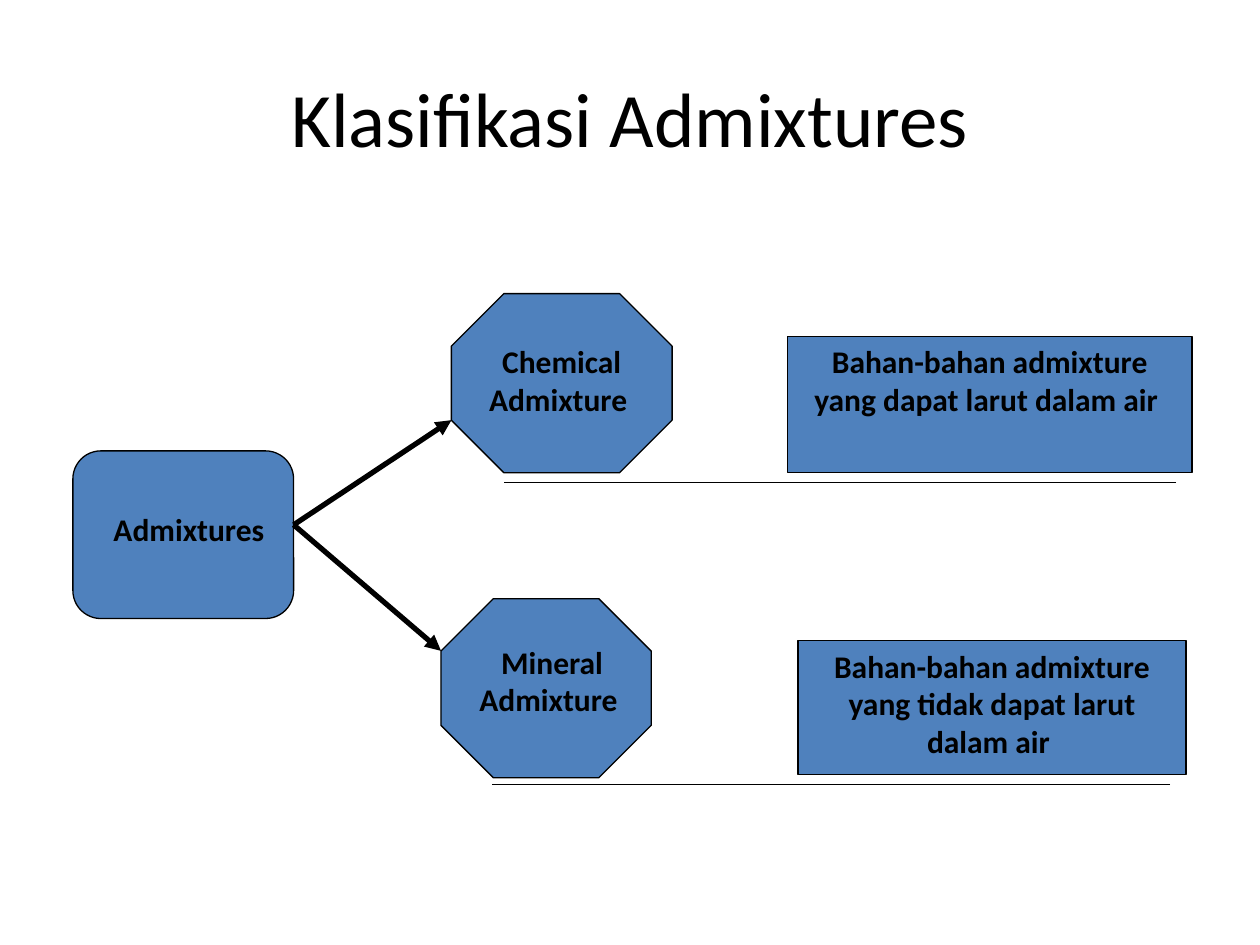
from typing import NamedTuple

from lxml import etree
from pptx import Presentation, util as u
from pptx.dml.color import RGBColor
from pptx.enum import shapes, text
from pptx.oxml import ns

COLOURS = {"fill": "4F81BD", "ink": "000000"}
FONT = "Calibri"


class Box(NamedTuple):
    """Left, top, width and height in centimetres."""
    left: float
    top: float
    width: float
    height: float

    def lengths(self) -> list[u.Cm]:
        return [u.Cm(value) for value in self]


class Node(NamedTuple):
    kind: shapes.MSO_SHAPE
    box: Box
    adjustments: tuple[float, ...]
    label: str
    label_box: Box


class Callout(NamedTuple):
    box: Box
    adjustments: tuple[float, ...]
    label: str


NODES = [
    Node(shapes.MSO_SHAPE.ROUNDED_RECTANGLE, Box(1.47, 9.09, 4.45, 3.38), (0.167,),
         "Admixtures", Box(1.27, 10.16, 5.08, 1.02)),
    Node(shapes.MSO_SHAPE.OCTAGON, Box(9.1, 5.92, 4.45, 3.61), (0.293,),
         "Chemical Admixture ", Box(9.32, 6.78, 4.01, 1.78)),
    Node(shapes.MSO_SHAPE.OCTAGON, Box(8.89, 12.07, 4.24, 3.61), (0.293,),
         "Mineral Admixture ", Box(8.69, 12.83, 4.88, 1.78)),
]
CALLOUTS = [
    Callout(Box(15.88, 6.78, 8.15, 2.74), (1.077, 0.961, 1.077, -0.701),
            "Bahan-bahan admixture yang dapat larut dalam air "),
    Callout(Box(16.09, 12.91, 7.82, 2.7), (1.078, 0.959, 1.078, -0.79),
            "Bahan-bahan admixture yang tidak dapat larut dalam air "),
]
ARROW_START = (5.92, 10.58)
ARROW_ENDS = [(9.1, 8.47), (8.89, 13.12)]


def colour(name: str) -> RGBColor:
    return RGBColor.from_string(COLOURS[name])


def write(shape, content: str, *, size: float = 18, bold: bool = True,
          anchor=text.MSO_ANCHOR.TOP) -> None:
    frame = shape.text_frame
    frame.word_wrap = True
    frame.vertical_anchor = anchor
    paragraph = frame.paragraphs[0]
    paragraph.alignment = text.PP_ALIGN.CENTER
    run = paragraph.add_run()
    run.text = content
    run.font.name = FONT
    run.font.size = u.Pt(size)
    run.font.bold = bold
    run.font.color.rgb = colour("ink")


def add_outlined_shape(slide, kind: shapes.MSO_SHAPE, box: Box,
                       adjustments: tuple[float, ...]):
    shape = slide.shapes.add_shape(kind, *box.lengths())
    for index, value in enumerate(adjustments):
        shape.adjustments[index] = value
    shape.shadow.inherit = False
    shape.fill.solid()
    shape.fill.fore_color.rgb = colour("fill")
    shape.line.color.rgb = colour("ink")
    shape.line.width = u.Pt(0.75)
    return shape


def add_node(slide, node: Node) -> None:
    add_outlined_shape(slide, node.kind, node.box, node.adjustments)
    write(slide.shapes.add_textbox(*node.label_box.lengths()), node.label)


def add_callout(slide, callout: Callout) -> None:
    shape = add_outlined_shape(slide, shapes.MSO_SHAPE.LINE_CALLOUT_1,
                               callout.box, callout.adjustments)
    write(shape, callout.label)


def add_arrow(slide, start: tuple[float, float], end: tuple[float, float]) -> None:
    connector = slide.shapes.add_connector(
        shapes.MSO_CONNECTOR.STRAIGHT, *(u.Cm(value) for value in start + end))
    connector.line.color.rgb = colour("ink")
    connector.line.width = u.Pt(3)
    properties = connector._element.spPr
    line = properties.find(ns.qn("a:ln"))
    etree.SubElement(line, ns.qn("a:tailEnd"), type="triangle")
    etree.SubElement(properties, ns.qn("a:effectLst"))


def main() -> None:
    presentation = Presentation()
    presentation.slide_width = u.Cm(25.4)
    presentation.slide_height = u.Cm(19.05)
    slide = presentation.slides.add_slide(presentation.slide_layouts[6])

    title = slide.shapes.add_textbox(*Box(1.27, 0.76, 22.86, 3.18).lengths())
    write(title, "Klasifikasi Admixtures", size=44, bold=False,
          anchor=text.MSO_ANCHOR.MIDDLE)

    root, *branches = NODES
    add_node(slide, root)
    for end in ARROW_ENDS:
        add_arrow(slide, ARROW_START, end)
    for branch in branches:
        add_node(slide, branch)
    for callout in CALLOUTS:
        add_callout(slide, callout)

    presentation.save("out.pptx")


if __name__ == "__main__":
    main()
